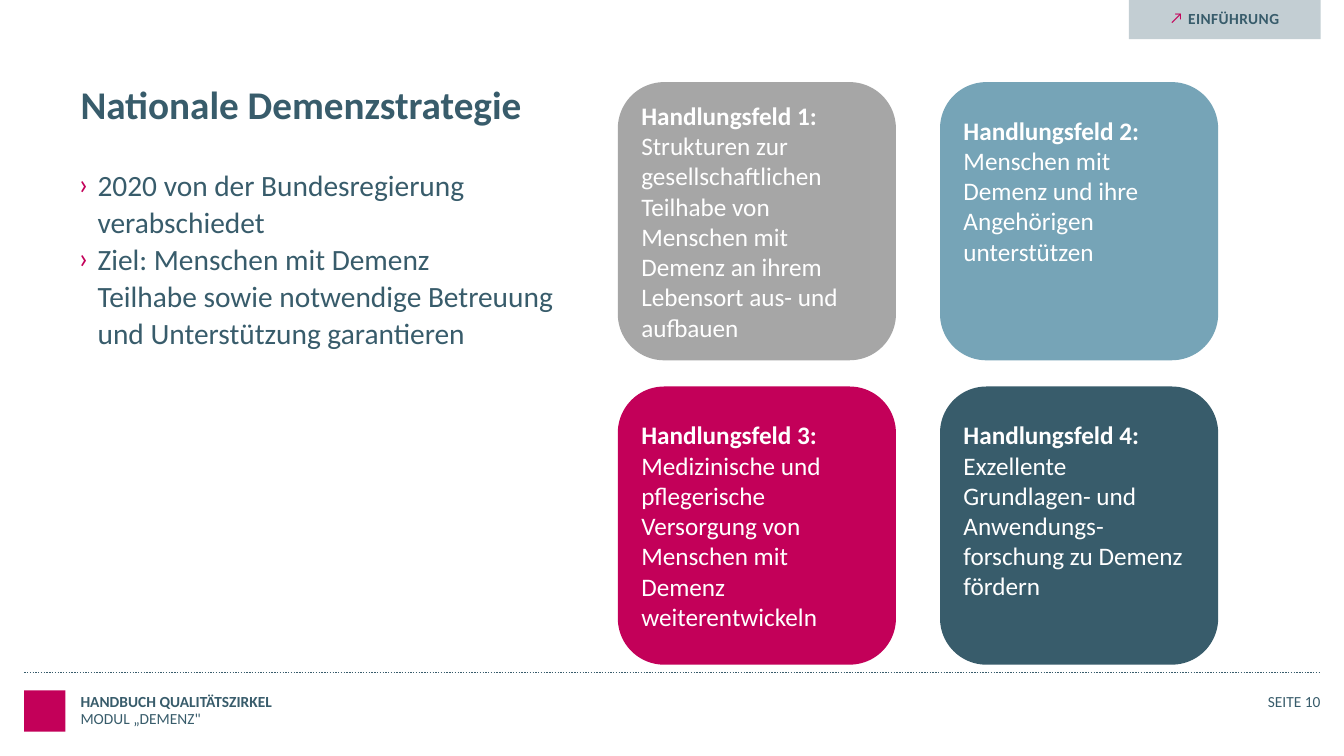
from dataclasses import dataclass, field

from lxml import etree
from pptx import Presentation
from pptx import util as u
from pptx.dml.color import RGBColor
from pptx.enum import dml, shapes, text
from pptx.oxml import ns

PETROL, MAGENTA, WHITE = "385C6B", "C30059", "FFFFFF"
FONT = "Calibri"


@dataclass
class Label:
    """A text box: position and size in cm, lines and text formats."""
    box: tuple[float, float, float, float]
    lines: list[str]
    font: dict
    para: dict = field(default_factory=dict)
    bullet_indent: float = 0


@dataclass
class Card:
    heading: str
    body: str
    fill: str
    lines_below: int = 0


FOOTER_LINE = {"line_spacing": u.Pt(13)}
FOOTER_FONT = {"size": u.Pt(11)}
LABELS = [
    Label((2.03, 2.18, 12.5, 1.2), ["Nationale Demenzstrategie"],
          {"size": u.Pt(28), "bold": True}, {"line_spacing": 0.89}),
    Label((1.98, 4.17, 13, 5),
          ["2020 von der Bundesregierung\vverabschiedet",
           "Ziel: Menschen mit Demenz\vTeilhabe sowie notwendige Betreuung"
           "\vund Unterstützung garantieren"],
          {"size": u.Pt(21)}, {"line_spacing": 1.05}, 0.48),
    Label((2.03, 17.45, 26.21, 0.46), ["HANDBUCH QUALITÄTSZIRKEL"],
          {**FOOTER_FONT, "bold": True}, FOOTER_LINE),
    Label((2.03, 17.88, 26.21, 0.46), ["MODUL „DEMENZ\""],
          FOOTER_FONT, FOOTER_LINE),
    Label((30.28, 17.45, 3, 0.46), ["SEITE 10"], FOOTER_FONT,
          {**FOOTER_LINE, "alignment": text.PP_ALIGN.RIGHT}),
]

CARDS = [
    Card("Handlungsfeld 1: ",
         "Strukturen zur gesellschaftlichen Teilhabe von Menschen mit Demenz "
         "an ihrem Lebensort aus- und aufbauen", "A6A6A6"),
    Card("Handlungsfeld 2: ",
         "Menschen mit Demenz und ihre Angehörigen unterstützen", "76A4B7", 2),
    Card("Handlungsfeld 3: ",
         "Medizinische und pflegerische Versorgung von Menschen mit Demenz "
         "weiterentwickeln", MAGENTA),
    Card("Handlungsfeld 4: ",
         "Exzellente Grundlagen- und Anwendungs-forschung zu Demenz fördern",
         PETROL, 1),
]
CARD_LEFT, CARD_TOP, CARD_SIZE = 15.57, 2.07, 7.01
COLUMN_STEP, ROW_STEP = 8.12, 7.67
CARD_INSET, CARD_LINE = 0.13, 0.77


def color(hex_value: str) -> RGBColor:
    return RGBColor.from_string(hex_value)


def apply(target, formats: dict) -> None:
    for name, value in formats.items():
        setattr(target, name, value)


def style_font(font, formats: dict, hex_value: str = PETROL) -> None:
    apply(font, {"name": FONT, **formats})
    font.color.rgb = color(hex_value)


def set_insets(frame, left: float = 0, top: float = 0,
               right: float = 0, bottom: float = 0) -> None:
    apply(frame, {"margin_left": u.Cm(left), "margin_top": u.Cm(top),
                  "margin_right": u.Cm(right), "margin_bottom": u.Cm(bottom),
                  "word_wrap": True})


def add_bullet(para, char: str, indent: float) -> None:
    """Give the paragraph a magenta bullet with a hanging indent in cm."""
    props = para._p.get_or_add_pPr()
    props.set("marL", str(u.Cm(indent)))
    props.set("indent", str(-u.Cm(indent)))
    tint = etree.SubElement(props, ns.qn("a:buClr"))
    etree.SubElement(tint, ns.qn("a:srgbClr")).set("val", MAGENTA)
    etree.SubElement(props, ns.qn("a:buFont")).set("typeface", FONT)
    etree.SubElement(props, ns.qn("a:buChar")).set("char", char)


def add_block(page, kind, box: tuple, fill: str):
    block = page.shapes.add_shape(kind, *map(u.Cm, box))
    block.shadow.inherit = False
    block.fill.solid()
    block.fill.fore_color.rgb = color(fill)
    block.line.fill.background()
    return block


def add_label(page, label: Label) -> None:
    frame = page.shapes.add_textbox(*map(u.Cm, label.box)).text_frame
    set_insets(frame)
    frame.text = "\n".join(label.lines)
    for para in frame.paragraphs:
        apply(para, label.para)
        if label.bullet_indent:
            add_bullet(para, "›", label.bullet_indent)
        for span in para.runs:
            style_font(span.font, label.font)


def add_card(page, index: int, card: Card) -> None:
    row, column = divmod(index, 2)
    box = (CARD_LEFT + column * COLUMN_STEP, CARD_TOP + row * ROW_STEP,
           CARD_SIZE, CARD_SIZE)
    block = add_block(page, shapes.MSO_SHAPE.ROUNDED_RECTANGLE, box, card.fill)
    frame = block.text_frame
    set_insets(frame, 0.25, CARD_INSET, 0.25,
               CARD_INSET + card.lines_below * CARD_LINE)
    frame.vertical_anchor = text.MSO_ANCHOR.MIDDLE
    para = frame.paragraphs[0]
    para.alignment = text.PP_ALIGN.LEFT
    for words, bold in ((card.heading, True), (card.body, False)):
        span = para.add_run()
        span.text = words
        style_font(span.font, {"size": u.Pt(18), "bold": bold}, WHITE)


def add_chapter_tag(page) -> None:
    tag = add_block(page, shapes.MSO_SHAPE.RECTANGLE,
                    (28.45, 0, 4.83, 0.99), "C3CED3")
    frame = tag.text_frame
    set_insets(frame, 0.5, 0.23, 1.04, 0.28)
    frame.vertical_anchor = text.MSO_ANCHOR.TOP
    para = frame.paragraphs[0]
    para.alignment = text.PP_ALIGN.RIGHT
    add_bullet(para, "↗", 0.46)
    span = para.add_run()
    span.text = "EINFÜHRUNG"
    style_font(span.font, {"size": u.Pt(11), "bold": True})
    span._r.get_or_add_rPr().set("spc", "30")


def add_footer_rule(page) -> None:
    rule = page.shapes.add_connector(
        shapes.MSO_CONNECTOR.STRAIGHT,
        u.Cm(0.61), u.Cm(16.94), u.Cm(33.27), u.Cm(16.94))
    rule.line.color.rgb = color(PETROL)
    apply(rule.line, {"width": u.Pt(1),
                      "dash_style": dml.MSO_LINE.ROUND_DOT})
    etree.SubElement(rule._element.spPr, ns.qn("a:effectLst"))


def main() -> None:
    deck = Presentation()
    apply(deck, {"slide_width": u.Cm(33.87), "slide_height": u.Cm(19.05)})
    page = deck.slides.add_slide(deck.slide_layouts[6])
    add_block(page, shapes.MSO_SHAPE.RECTANGLE,
              (0.61, 17.4, 1.04, 1.04), MAGENTA)
    add_footer_rule(page)
    add_chapter_tag(page)
    for label in LABELS:
        add_label(page, label)
    for index, card in enumerate(CARDS):
        add_card(page, index, card)
    deck.save("out.pptx")


if __name__ == "__main__":
    main()
